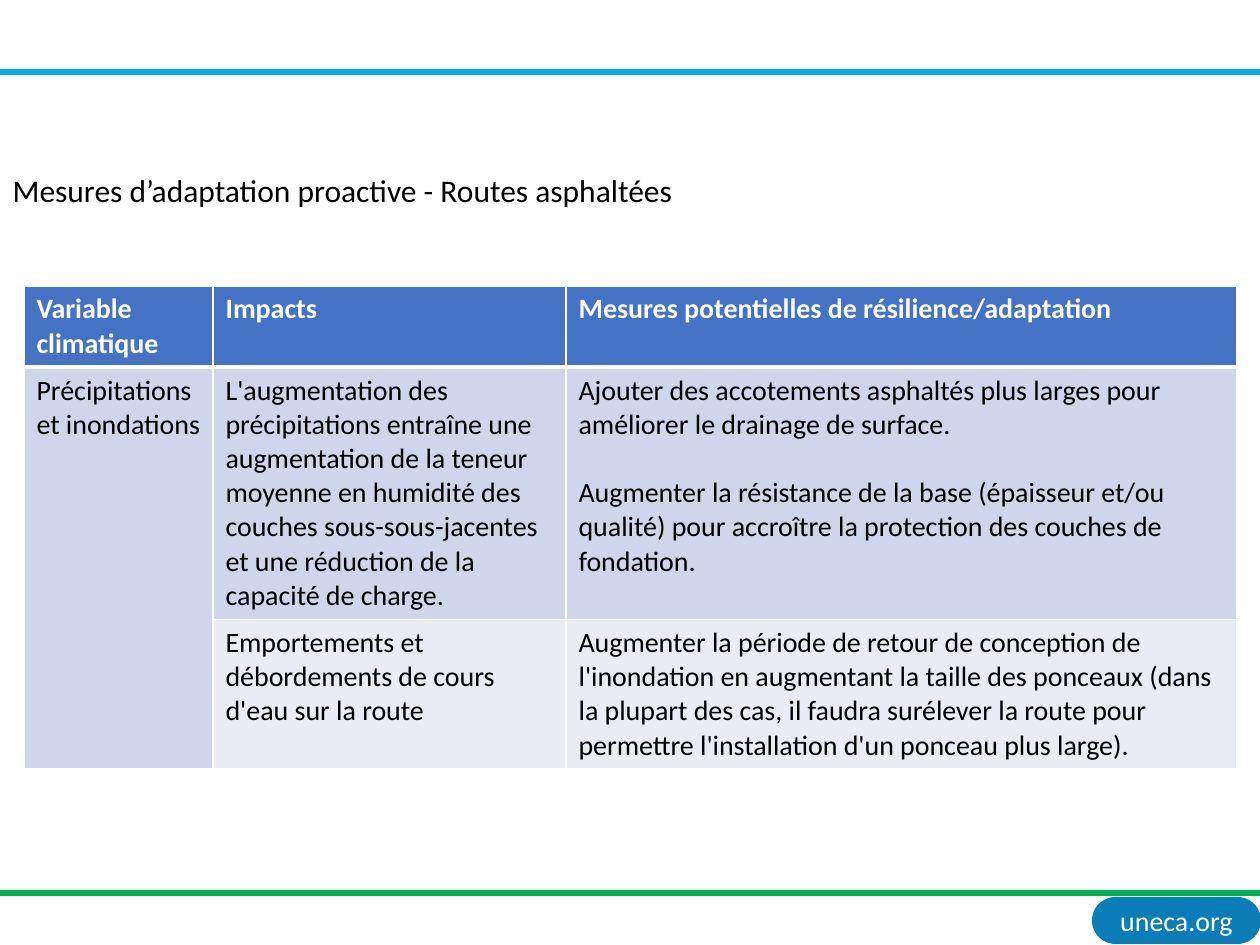
"""Build the slide on proactive adaptation measures for asphalt roads."""
import dataclasses

import lxml.etree
import pptx
import pptx.dml.color
import pptx.enum.shapes
import pptx.enum.text
import pptx.oxml.ns
import pptx.util

PX_PER_INCH = 126
SHAPES = pptx.enum.shapes.MSO_SHAPE
ANCHOR = pptx.enum.text.MSO_ANCHOR
ALIGN = pptx.enum.text.PP_ALIGN

TITLE = "Mesures d’adaptation proactive - Routes asphaltées"
COLUMN_WIDTHS = [189, 353, 671]
ROW_HEIGHTS = [79, 248, 146]
MEASURES = [
    [["Variable climatique"], ["Impacts"], ["Mesures potentielles de résilience/adaptation"]],
    [
        ["Précipitations", "et inondations"],
        ["L'augmentation des précipitations entraîne une augmentation de la teneur moyenne "
         "en humidité des couches sous-sous-jacentes et une réduction de la capacité de charge."],
        ["Ajouter des accotements asphaltés plus larges pour améliorer le drainage de surface.",
         "Augmenter la résistance de la base (épaisseur et/ou qualité) pour accroître la "
         "protection des couches de fondation."],
    ],
    [
        [],
        ["Emportements et débordements de cours d'eau sur la route"],
        ["Augmenter la période de retour de conception de l'inondation en augmentant la taille "
         "des ponceaux (dans la plupart des cas, il faudra surélever la route pour permettre "
         "l'installation d'un ponceau plus large)."],
    ],
]


@dataclasses.dataclass(frozen=True)
class Theme:
    """Colours, font and type sizes of the slide."""
    font: str = "Calibri"
    title_size: int = 18
    body_size: int = 16
    measure_gap: float = 19.5
    ink: str = "000000"
    light: str = "FFFFFF"
    top_rule: str = "00B0F0"
    bottom_rule: str = "00B050"
    badge: str = "0A7CB8"
    header: str = "4472C4"
    first_band: str = "CFD5EA"
    second_band: str = "E9EBF5"


THEME = Theme()


def px(length):
    """Turn a length in px into EMU."""
    return pptx.util.Emu(round(length * 914400 / PX_PER_INCH))


def rgb(code):
    """Turn a hex code into a colour."""
    return pptx.dml.color.RGBColor.from_string(code)


def apply_format(target, values):
    """Set each named attribute of the target."""
    for name, value in values.items():
        setattr(target, name, value)


def style_font(paragraph, size, color, bold=False):
    """Give a paragraph the theme font in a size and colour."""
    apply_format(paragraph.font, {"name": THEME.font, "size": pptx.util.Pt(size), "bold": bold})
    paragraph.font.color.rgb = rgb(color)


def add_block(slide, kind, bounds, color):
    """Add a flat filled shape without outline or shadow."""
    block = slide.shapes.add_shape(kind, *map(px, bounds))
    block.shadow.inherit = False
    block.fill.solid()
    block.fill.fore_color.rgb = rgb(color)
    block.line.fill.background()
    return block


def add_badge(slide, address, bounds):
    """Add the rounded badge that holds the web address."""
    badge = add_block(slide, SHAPES.ROUNDED_RECTANGLE, bounds, THEME.badge)
    badge.adjustments[0] = 0.5
    inset = pptx.util.Inches(0.05)
    apply_format(badge.text_frame, {
        "text": address, "word_wrap": True, "vertical_anchor": ANCHOR.MIDDLE,
        "margin_left": inset, "margin_right": inset, "margin_top": inset, "margin_bottom": inset,
    })
    label = badge.text_frame.paragraphs[0]
    label.alignment = ALIGN.CENTER
    style_font(label, THEME.body_size, THEME.light)


def set_title(slide, wording, bounds):
    """Move, fill and format the title placeholder."""
    title = slide.shapes.title
    apply_format(title, dict(zip(("left", "top", "width", "height"), map(px, bounds))))
    apply_format(title.text_frame, {
        "text": wording, "word_wrap": False, "vertical_anchor": ANCHOR.TOP,
        "auto_size": pptx.enum.text.MSO_AUTO_SIZE.NONE,
    })
    heading = title.text_frame.paragraphs[0]
    heading.alignment = ALIGN.LEFT
    style_font(heading, THEME.title_size, THEME.ink)


def set_borders(cell, widths):
    """Draw the light borders of a cell, with widths in points by side."""
    properties = cell._tc.get_or_add_tcPr()
    qn = pptx.oxml.ns.qn
    for side, width in widths.items():
        border = lxml.etree.SubElement(properties, qn(f"a:ln{side}"), w=str(pptx.util.Pt(width)))
        fill = lxml.etree.SubElement(border, qn("a:solidFill"))
        lxml.etree.SubElement(fill, qn("a:srgbClr"), val=THEME.light)


def fill_cell(cell, entries, band, is_header, gap):
    """Write the entries of a cell and colour it."""
    cell.fill.solid()
    cell.fill.fore_color.rgb = rgb(band)
    for index, entry in enumerate(entries):
        frame = cell.text_frame
        paragraph = frame.add_paragraph() if index else frame.paragraphs[0]
        paragraph.text = entry
        if index and gap:
            paragraph.space_before = pptx.util.Pt(gap)
        style_font(paragraph, THEME.body_size, THEME.light if is_header else THEME.ink, is_header)


def add_measures_table(slide, left, top):
    """Add the table of climate variables, impacts and measures."""
    bounds = (left, top, sum(COLUMN_WIDTHS), sum(ROW_HEIGHTS))
    table = slide.shapes.add_table(
        len(ROW_HEIGHTS), len(COLUMN_WIDTHS), *map(px, bounds)).table
    for column, width in zip(table.columns, COLUMN_WIDTHS):
        column.width = px(width)
    for row, height in zip(table.rows, ROW_HEIGHTS):
        row.height = px(height)
    table.cell(1, 0).merge(table.cell(2, 0))
    bands = [THEME.header, THEME.first_band, THEME.second_band]
    last_column = len(COLUMN_WIDTHS) - 1
    for row_index, (row, band) in enumerate(zip(MEASURES, bands)):
        for column_index, entries in enumerate(row):
            cell = table.cell(row_index, column_index)
            set_borders(cell, {"L": 1, "R": 1, "T": 3 if row_index == 1 else 1,
                               "B": 3 if row_index == 0 else 1})
            cell_band = THEME.first_band if cell.is_spanned else band
            gap = THEME.measure_gap if column_index == last_column else 0
            fill_cell(cell, entries, cell_band, row_index == 0, gap)


def main():
    """Build and save the slide."""
    deck = pptx.Presentation()
    apply_format(deck, {"slide_width": px(1260), "slide_height": px(945)})
    slide = deck.slides.add_slide(deck.slide_layouts.get_by_name("Title Only"))
    add_badge(slide, "uneca.org", (1092, 897, 169, 47))
    add_block(slide, SHAPES.RECTANGLE, (0, 69, 1260, 6), THEME.top_rule)
    add_block(slide, SHAPES.RECTANGLE, (0, 890, 1260, 6), THEME.bottom_rule)
    add_measures_table(slide, 24, 286)
    set_title(slide, TITLE, (0, 165, 693, 50))
    deck.save("out.pptx")


if __name__ == "__main__":
    main()
